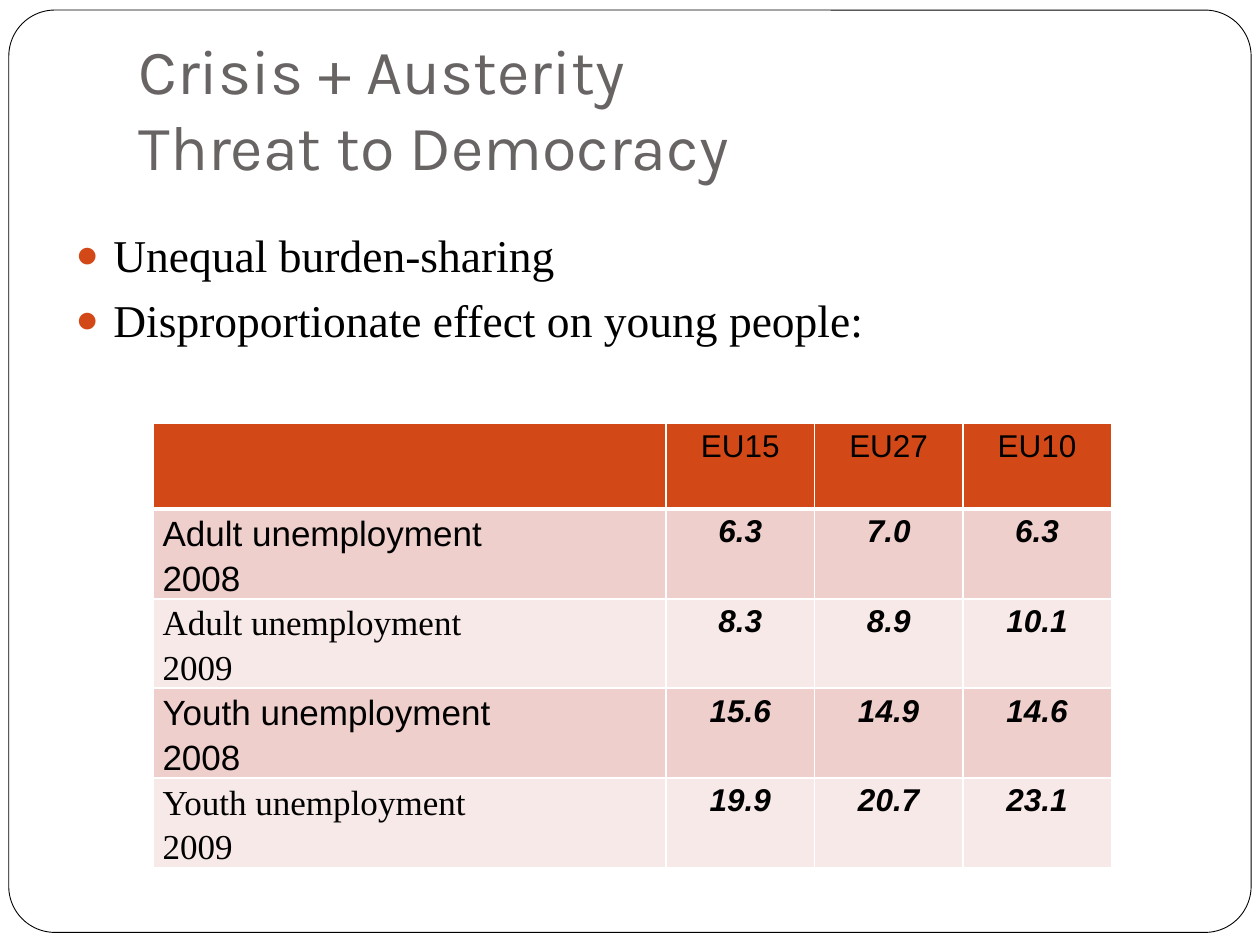
import pptx
import pptx.util
import pptx.dml.color
import pptx.enum.shapes
import pptx.enum.text
import pptx.oxml.ns
import lxml.etree

Pt = pptx.util.Pt
COLS, ROWS = 100, 75
HEADS = ["", "EU15", "EU27", "EU10"]
RATES = [
    (("Adult unemployment", "2008"), "6.3", "7.0", "6.3"),
    (("Adult unemployment", "2009"), "8.3", "8.9", "10.1"),
    (("Youth unemployment", "2008"), "15.6", "14.9", "14.6"),
    (("Youth unemployment", "2009"), "19.9", "20.7", "23.1"),
]
SERIF = "Times New Roman"


def tint(code):
    return pptx.dml.color.RGBColor.from_string(code)


def grid(deck, left, top, wide, high):
    col, row = deck.slide_width / COLS, deck.slide_height / ROWS
    return int(left * col), int(top * row), int(wide * col), int(high * row)


def place(shape, box):
    shape.left, shape.top, shape.width, shape.height = box


def node(root, tag, **attrs):
    return lxml.etree.SubElement(root, pptx.oxml.ns.qn(tag), attrs)


def write(para, text, size, face, shade="000000", strong=False):
    run = para.add_run()
    run.text = text
    font = run.font
    font.size, font.name = Pt(size), face
    font.bold = font.italic = strong
    font.color.rgb = tint(shade)


def frame(slide, box):
    shape = slide.shapes.add_shape(
        pptx.enum.shapes.MSO_SHAPE.ROUNDED_RECTANGLE, *box)
    shape.adjustments[0] = 0.05
    shape.shadow.inherit = False
    shape.fill.solid()
    shape.fill.fore_color.rgb = tint("FFFFFF")
    shape.line.color.rgb = tint("000000")
    shape.line.width = Pt(0.5)
    slide.shapes._spTree.insert(2, shape._element)


def title(slide, box, lines):
    shape = slide.shapes.title
    place(shape, box)
    text = shape.text_frame
    text.vertical_anchor = pptx.enum.text.MSO_ANCHOR.BOTTOM
    text.margin_bottom = pptx.util.Inches(0.1)
    para = text.paragraphs[0]
    para.alignment = pptx.enum.text.PP_ALIGN.LEFT
    for n, line in enumerate(lines):
        if n:
            para.add_line_break()
        write(para, line, 36, "Karla", "696464")


def points(slide, box, lines):
    shape = slide.placeholders[1]
    place(shape, box)
    text = shape.text_frame
    dent = pptx.util.Inches(0.3)
    for n, line in enumerate(lines):
        para = text.add_paragraph() if n else text.paragraphs[0]
        para.space_before = Pt(5.8)
        props = para._p.get_or_add_pPr()
        props.set("marL", str(dent))
        props.set("indent", str(-dent))
        node(node(props, "a:buClr"), "a:srgbClr", val="D34817")
        node(props, "a:buSzPct", val="85000")
        node(props, "a:buFont", typeface="Arial")
        node(props, "a:buChar", char="●")
        write(para, line, 26, SERIF)


def edge(cell, base):
    props = cell._tc.get_or_add_tcPr()
    sides = {"a:lnL": 1, "a:lnR": 1, "a:lnT": 1, "a:lnB": base}
    for n, (tag, width) in enumerate(sides.items()):
        line = node(props, tag, w=str(Pt(width)))
        node(node(line, "a:solidFill"), "a:srgbClr", val="FFFFFF")
        props.insert(n, line)


def fill(cell, lines, shade, size, face, strong, mid):
    cell.fill.solid()
    cell.fill.fore_color.rgb = tint(shade)
    cell.margin_left = cell.margin_right = pptx.util.Inches(0.07)
    cell.margin_top = cell.margin_bottom = 0
    text = cell.text_frame
    for n, line in enumerate(lines):
        para = text.add_paragraph() if n else text.paragraphs[0]
        para.line_spacing = 1.15
        if mid:
            para.alignment = pptx.enum.text.PP_ALIGN.CENTER
        if line:
            write(para, line, size, face, strong=strong)


def table(slide, box):
    sheet = slide.shapes.add_table(len(RATES) + 1, len(HEADS), *box).table
    wide = box[2]
    shares = [0.535] + [0.155] * 3
    for col, share in zip(sheet.columns, shares):
        col.width = int(wide * share)
    for c, head in enumerate(HEADS):
        cell = sheet.cell(0, c)
        fill(cell, [head], "D34817", 18, "Arial", False, True)
        edge(cell, 3)
    for r, (label, *rates) in enumerate(RATES, 1):
        shade, face = ("EFCFCC", "Arial") if r % 2 else ("F7E9E8", SERIF)
        fill(sheet.cell(r, 0), label, shade, 20, face, False, False)
        for c, rate in enumerate(rates, 1):
            fill(sheet.cell(r, c), [rate], shade, 18, "Arial", True, True)
        for c in range(len(HEADS)):
            edge(sheet.cell(r, c), 1)


def main():
    deck = pptx.Presentation()
    deck.slide_width = pptx.util.Inches(10)
    deck.slide_height = pptx.util.Inches(7.5)
    slide = deck.slides.add_slide(deck.slide_layouts[1])
    frame(slide, grid(deck, 0.7, 0.8, 98.6, 73.2))
    title(slide, grid(deck, 10, 3, 85, 12.5),
          ["Crisis + Austerity", "Threat to Democracy"])
    points(slide, grid(deck, 5, 17.5, 90.7, 54.7),
           ["Unequal burden-sharing",
            "Disproportionate effect on young people:"])
    table(slide, grid(deck, 12.2, 33.6, 76, 34))
    deck.save("out.pptx")


if __name__ == "__main__":
    main()
